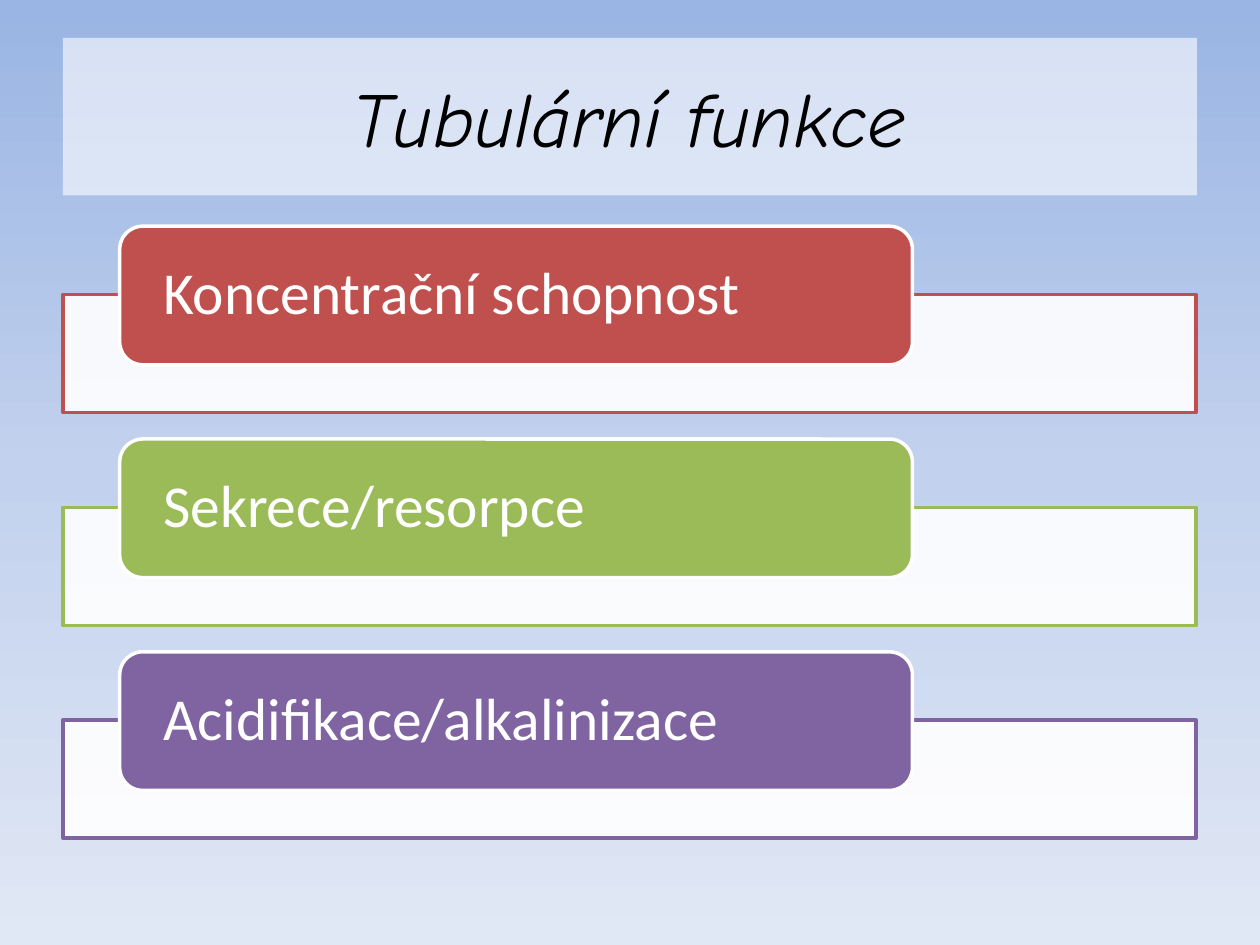
"""Build the slide on tubular functions."""
import copy

import pptx
import pptx.dml.color
import pptx.enum.shapes
import pptx.enum.text
import pptx.oxml
import pptx.oxml.ns
import pptx.util

Pt = pptx.util.Pt
Kind = pptx.enum.shapes.MSO_SHAPE
Align = pptx.enum.text.PP_ALIGN
Anchor = pptx.enum.text.MSO_ANCHOR
qn = pptx.oxml.ns.qn


def paint(color, code):
    color.rgb = pptx.dml.color.RGBColor.from_string(code)


class Deck:
    title = {"name": "Comic Neue", "size": Pt(44), "italic": True}
    label = {"name": "Calibri", "size": Pt(34)}

    def __init__(self, wide, high):
        self.show = pptx.Presentation()
        self.show.slide_width, self.show.slide_height = Pt(wide), Pt(high)
        self.slide = self.show.slides.add_slide(self.show.slide_layouts[6])

    def back(self, codes):
        fill = self.slide.background.fill
        fill.gradient()
        fill.gradient_angle = 270
        stops = self.slide.element.find(".//" + qn("a:gsLst"))
        for _ in codes[2:]:
            stops.append(copy.deepcopy(stops[-1]))
        for i, (stop, code) in enumerate(zip(fill.gradient_stops, codes)):
            stop.position = i / (len(codes) - 1)
            paint(stop.color, code)

    def box(self, kind, area, fill, line=None, alpha=100):
        shape = self.slide.shapes.add_shape(kind, *map(Pt, area))
        shape.shadow.inherit = False
        shape.fill.solid()
        paint(shape.fill.fore_color, fill)
        if alpha < 100:
            tint = shape.fill._xPr.find(".//" + qn("a:srgbClr"))
            node = pptx.oxml.parse_xml(
                f'<a:alpha {pptx.oxml.ns.nsdecls("a")} val="{alpha * 1000}"/>')
            tint.append(node)
        if line:
            paint(shape.line.color, line)
            shape.line.width = Pt(2)
        else:
            shape.line.fill.background()
        return shape

    def text(self, shape, words, style, code, align, inset, space=1):
        frame = shape.text_frame
        form = {"word_wrap": True, "vertical_anchor": Anchor.MIDDLE,
                "margin_left": Pt(inset), "margin_right": Pt(inset),
                "margin_top": 0, "margin_bottom": 0}
        para = frame.paragraphs[0]
        run = para.add_run()
        run.text = words
        lines = {"alignment": align, "line_spacing": space}
        for item, values in ((frame, form), (para, lines), (run.font, style)):
            for key, value in values.items():
                setattr(item, key, value)
        paint(run.font.color, code)

    def row(self, top, words, code):
        self.box(Kind.RECTANGLE, (36, top + 39, 647.5, 67.5), "FFFFFF", code, 90)
        tab = self.box(Kind.ROUNDED_RECTANGLE, (68.4, top, 453, 79.2), code, "FFFFFF")
        self.text(tab, words, self.label, "FFFFFF", Align.LEFT, 21, 0.9)


def main():
    deck = Deck(720, 540)
    deck.back(["9AB5E4", "C2D1ED", "E1E8F5"])
    head = deck.box(Kind.RECTANGLE, (36, 21.6, 648, 90), "FFFFFF", alpha=60)
    deck.text(head, "Tubulární funkce", deck.title, "000000", Align.CENTER, 7.2)
    rows = [("Koncentrační schopnost", "C0504D"),
            ("Sekrece/resorpce", "9BBB59"),
            ("Acidifikace/alkalinizace", "8064A2")]
    for i, (words, code) in enumerate(rows):
        deck.row(129.3 + i * 121.6, words, code)
    deck.show.save("out.pptx")


if __name__ == "__main__":
    main()
